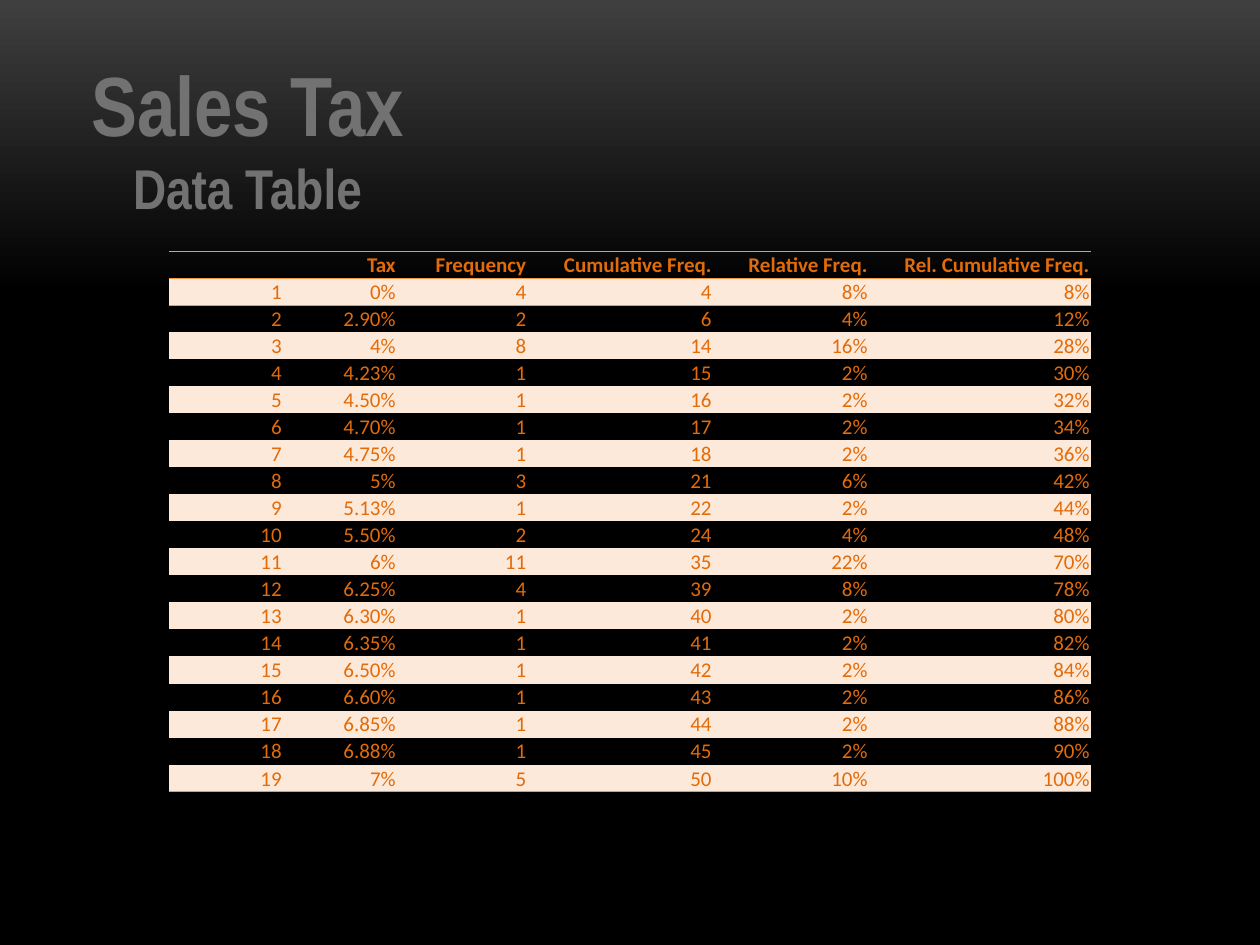
from dataclasses import dataclass
from itertools import accumulate

from lxml import etree
from pptx import Presentation
from pptx.dml.color import RGBColor
from pptx.enum.text import MSO_ANCHOR, MSO_AUTO_SIZE, PP_ALIGN
from pptx.oxml.ns import qn
from pptx.util import Pt

BOTTOM = MSO_ANCHOR.BOTTOM
GROW = MSO_AUTO_SIZE.SHAPE_TO_FIT_TEXT
CENTER = PP_ALIGN.CENTER
RIGHT = PP_ALIGN.RIGHT
BLANK_LAYOUT = 6
NO_GRID_STYLE = "{2D5ABB26-0587-4C30-8999-92F81FD0307C}"


@dataclass(frozen=True)
class Theme:
    bg_top: str = "3F3F3F"
    bg_bottom: str = "000000"
    title: str = "727273"
    title_outline: str = "FBA900"
    cell_text: str = "E26B0A"
    band: str = "FDE9D9"
    rule: str = "F79646"
    title_font: str = "Arial Narrow"
    table_font: str = "Calibri"
    title_size: float = 48
    subtitle_size: float = 32
    table_size: float = 12
    outline_width: float = 1
    rule_width: float = 0.5


THEME = Theme()
HEADERS = ["", "Tax", "Frequency", "Cumulative Freq.", "Relative Freq.",
           "Rel. Cumulative Freq."]
COL_WIDTHS = [65.1, 65.1, 74.6, 106, 89.1, 126.9]
ROW_HEIGHT = 15.45
TAX_COUNTS = [
    ("0%", 4), ("2.90%", 2), ("4%", 8), ("4.23%", 1), ("4.50%", 1),
    ("4.70%", 1), ("4.75%", 1), ("5%", 3), ("5.13%", 1), ("5.50%", 2),
    ("6%", 11), ("6.25%", 4), ("6.30%", 1), ("6.35%", 1), ("6.50%", 1),
    ("6.60%", 1), ("6.85%", 1), ("6.88%", 1), ("7%", 5),
]


def set_attrs(obj, values):
    for name, value in values.items():
        setattr(obj, name, value)


def set_font(font, name, size, color, bold):
    set_attrs(font, {"name": name, "size": Pt(size), "bold": bold})
    font.color.rgb = RGBColor.from_string(color)


def make_line(tag, color, width):
    ln = etree.Element(qn(tag), w=str(Pt(width)))
    fill = etree.SubElement(ln, qn("a:solidFill"))
    etree.SubElement(fill, qn("a:srgbClr"), val=color)
    return ln


def set_background(s):
    fill = s.background.fill
    fill.gradient()
    fill.gradient_angle = 270
    stops = [(0, THEME.bg_top), (0.31, THEME.bg_bottom)]
    for stop, (position, color) in zip(fill.gradient_stops, stops):
        stop.position = position
        stop.color.rgb = RGBColor.from_string(color)


def add_title(s, lines, left, top, width, height):
    sp = s.shapes.add_textbox(Pt(left), Pt(top), Pt(width), Pt(height))
    tf = sp.text_frame
    set_attrs(tf, {"word_wrap": True, "auto_size": GROW})
    for i, (text, size) in enumerate(lines):
        p = tf.add_paragraph() if i else tf.paragraphs[0]
        p.alignment = CENTER
        r = p.add_run()
        r.text = text
        set_font(r.font, THEME.title_font, size, THEME.title, True)
        outline = make_line("a:ln", THEME.title_outline, THEME.outline_width)
        r._r.get_or_add_rPr().insert(0, outline)


def frequency_rows():
    counts = [count for _, count in TAX_COUNTS]
    total = sum(counts)
    rows = [HEADERS]
    for i, ((tax, count), running) in enumerate(
            zip(TAX_COUNTS, accumulate(counts)), start=1):
        rows.append([str(i), tax, str(count), str(running),
                     f"{count / total:.0%}", f"{running / total:.0%}"])
    return rows


def format_cell(cell, text, header, banded, rules):
    set_attrs(cell, {
        "vertical_anchor": BOTTOM, "margin_left": Pt(0.6),
        "margin_right": Pt(0.6), "margin_top": Pt(0.6), "margin_bottom": 0,
    })
    for tag in rules:
        cell._tc.get_or_add_tcPr().append(
            make_line(tag, THEME.rule, THEME.rule_width))
    if banded:
        cell.fill.solid()
        cell.fill.fore_color.rgb = RGBColor.from_string(THEME.band)
    else:
        cell.fill.background()
    p = cell.text_frame.paragraphs[0]
    p.alignment = RIGHT
    if text:
        target = p.add_run()
        target.text = text
    else:
        target = p
    set_font(target.font, THEME.table_font, THEME.table_size,
             THEME.cell_text, header)


def add_frequency_table(s, rows, left, top):
    frame = s.shapes.add_table(
        len(rows), len(COL_WIDTHS), Pt(left), Pt(top),
        Pt(sum(COL_WIDTHS)), Pt(ROW_HEIGHT * len(rows)))
    table = frame.table
    set_attrs(table, {"first_row": False, "horz_banding": False})
    table._tbl.tblPr.find(qn("a:tableStyleId")).text = NO_GRID_STYLE
    for column, width in zip(table.columns, COL_WIDTHS):
        column.width = Pt(width)
    rules = {0: ["a:lnT", "a:lnB"], 1: ["a:lnT"], len(rows) - 1: ["a:lnB"]}
    for i, values in enumerate(rows):
        table.rows[i].height = Pt(ROW_HEIGHT)
        for j, text in enumerate(values):
            format_cell(table.cell(i, j), text, i == 0, i % 2 == 1,
                        rules.get(i, []))


def main():
    prs = Presentation()
    set_attrs(prs, {"slide_width": Pt(720), "slide_height": Pt(540)})
    s = prs.slides.add_slide(prs.slide_layouts[BLANK_LAYOUT])
    set_background(s)
    add_title(s, [("Sales Tax", THEME.title_size),
                  ("Data Table", THEME.subtitle_size)],
              16.5, 26.6, 250, 104.4)
    add_frequency_table(s, frequency_rows(), 96.5, 143.4)
    prs.save("out.pptx")


if __name__ == "__main__":
    main()
